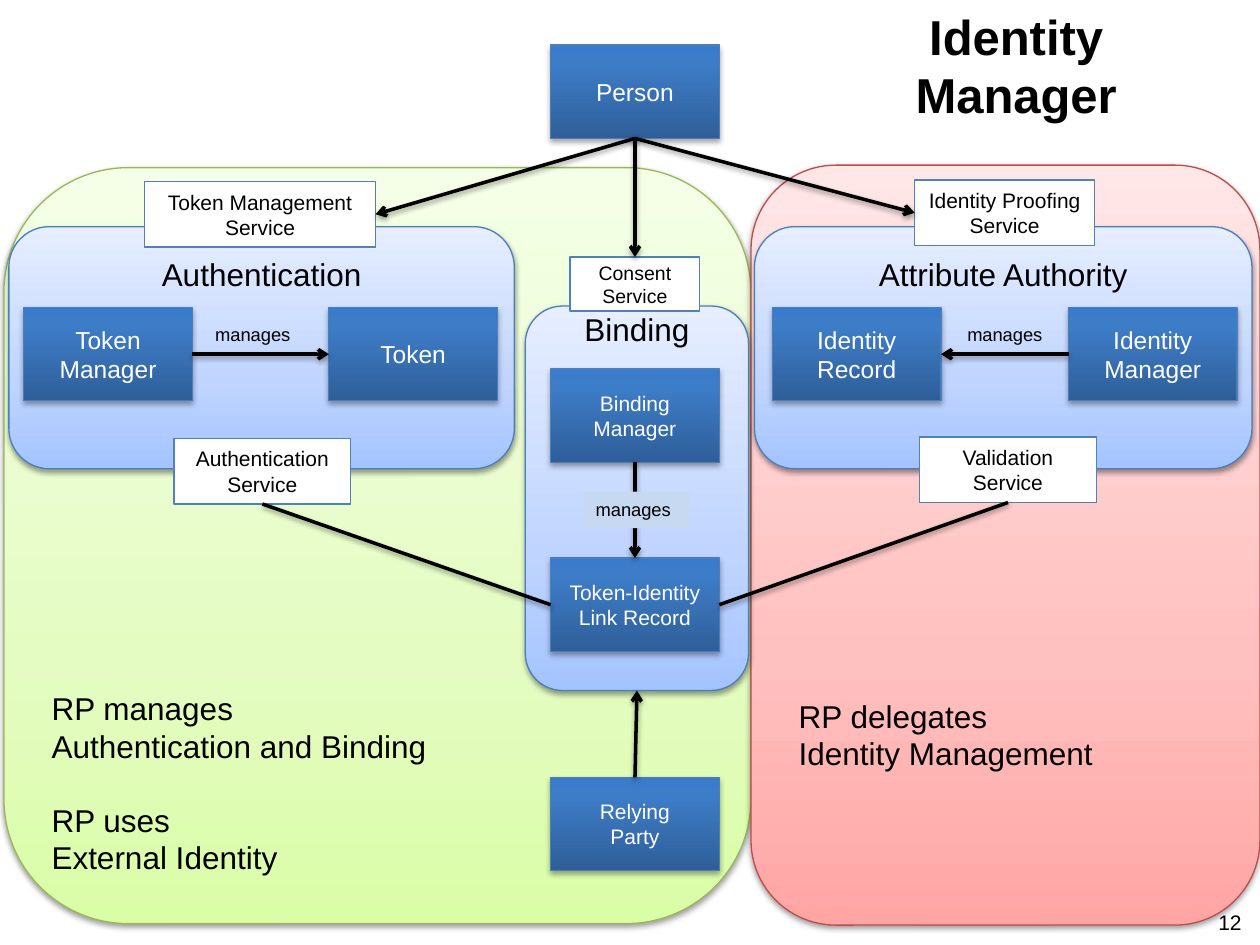
"""Build the identity manager diagram slide."""
from lxml.etree import SubElement
from pptx import Presentation
from pptx.dml.color import RGBColor
from pptx.enum.shapes import MSO_CONNECTOR as Connector, MSO_SHAPE as Shape
from pptx.enum.text import MSO_ANCHOR as Anchor, PP_ALIGN as Align
from pptx.oxml.ns import qn
from pptx.util import Cm, Pt

COLORS = {"black": "000000", "white": "FFFFFF", "label": "C6D9F1",
          "green_line": "98B955", "red_line": "BF4C48",
          "blue_line": "4B7EBC", "service_line": "4F81BD"}
GRADIENTS = {"green": [(0, "DAFDA7"), (35, "E4FCC2"), (100, "F5FFE7")],
             "red": [(0, "FFA6A5"), (35, "FFC0BF"), (100, "FFE7E7")],
             "pale_blue": [(0, "A4C4FF"), (35, "BFD4FF"), (100, "E6EEFF")],
             "deep_blue": [(0, "2F5F99"), (80, "3D7CC7"), (100, "3A7CCB")]}
TOP, LEFT, BOTTOM, RIGHT = range(4)
COLUMN, ROW = 11.1, 6.2


def rgb(name):
    return RGBColor.from_string(COLORS[name])


def set_values(target, values):
    for name, value in values.items():
        setattr(target, name, value)


def add_shadow(properties, opacity=38, distance=20000):
    effects = properties.find(qn("a:effectLst"))
    if effects is None:
        effects = SubElement(properties, qn("a:effectLst"))
    shadow = SubElement(effects, qn("a:outerShdw"), blurRad="40000",
                        dist=str(distance), dir="5400000", rotWithShape="0")
    color = SubElement(shadow, qn("a:srgbClr"), val=COLORS["black"])
    SubElement(color, qn("a:alpha"), val=str(opacity * 1000))


def fill_gradient(shape, name):
    shape.fill.gradient()
    shape.fill.gradient_angle = 90
    stops = next(shape._element.spPr.iter(qn("a:gsLst")))
    for stop in list(stops):
        stops.remove(stop)
    for position, color in GRADIENTS[name]:
        stop = SubElement(stops, qn("a:gs"), pos=str(position * 1000))
        SubElement(stop, qn("a:srgbClr"), val=color)


def write(shape, text, size, color="black", align=Align.CENTER, bold=False, **frame):
    text_frame = shape.text_frame
    text_frame.text = text
    set_values(text_frame, {"word_wrap": True, **frame})
    for paragraph in text_frame.paragraphs:
        paragraph.alignment = align
        set_values(paragraph.font, {"name": "Arial", "size": Pt(size), "bold": bold})
        paragraph.font.color.rgb = rgb(color)


def add_box(slide, kind, bounds, line):
    shape = slide.shapes.add_shape(kind, *map(Cm, bounds))
    shape.shadow.inherit = False
    shape.line.color.rgb = rgb(line)
    shape.line.width = Pt(0.75)
    return shape


def add_panel(slide, bounds, gradient, line, heading="", margin_top=0):
    panel = add_box(slide, Shape.ROUNDED_RECTANGLE, bounds, line)
    fill_gradient(panel, gradient)
    add_shadow(panel._element.spPr)
    if heading:
        write(panel, heading, 18, vertical_anchor=Anchor.TOP, margin_top=Cm(margin_top))
    return panel


def add_entity(slide, left, top, text, size=14):
    entity = add_box(slide, Shape.RECTANGLE, (left, top, 3.4, 1.88), "blue_line")
    fill_gradient(entity, "deep_blue")
    add_shadow(entity._element.spPr, 35, 23000)
    write(entity, text, size, "white", vertical_anchor=Anchor.MIDDLE,
          margin_left=0, margin_right=0)
    return entity


def add_service(slide, left, top, width, text, height=1.32, size=12):
    service = add_box(slide, Shape.RECTANGLE, (left, top, width, height), "service_line")
    service.fill.solid()
    service.fill.fore_color.rgb = rgb("white")
    write(service, text, size, vertical_anchor=Anchor.MIDDLE, margin_left=0, margin_right=0)
    return service


def add_text(slide, bounds, text, size, **style):
    box = slide.shapes.add_textbox(*map(Cm, bounds))
    write(box, text, size, **{"align": Align.LEFT, **style})
    return box


def add_manages(slide, left, top):
    return add_text(slide, (left, top, 2.13, 0.74), "manages", 10.5)


def connect(slide, start, start_side, end, end_side, arrow=True):
    connector = slide.shapes.add_connector(Connector.STRAIGHT, 0, 0, 0, 0)
    connector.begin_connect(start, start_side)
    connector.end_connect(end, end_side)
    connector.line.color.rgb = rgb("black")
    connector.line.width = Pt(2)
    if arrow:
        SubElement(connector.line._get_or_add_ln(), qn("a:tailEnd"), type="arrow")
    add_shadow(connector._element.spPr)


def main():
    presentation = Presentation()
    presentation.slide_width, presentation.slide_height = Cm(25.4), Cm(19.05)
    slide = presentation.slides.add_slide(presentation.slide_layouts[6])

    add_text(slide, (24.31, 18.21, 1.04, 0.76), "12", 12)
    add_panel(slide, (0.08, 3.38, 15.06, 15.24), "green", "green_line")
    add_panel(slide, (15.14, 3.33, 10.26, 15.32), "red", "red_line")
    managed = add_text(slide, (0.79, 13.77, 8.43, 4.11),
                       "RP manages\nAuthentication and Binding\nRP uses\nExternal Identity", 18)
    managed.text_frame.paragraphs[2].space_before = Pt(20.5)
    add_text(slide, (15.85, 13.92, 8.43, 1.8), "RP delegates\nIdentity Management", 18)
    add_text(slide, (15.57, 0, 9.83, 2.64), "Identity\nManager", 28,
             align=Align.CENTER, bold=True)

    blue = ("pale_blue", "blue_line")
    binding = add_panel(slide, (10.59, 6.17, 4.5, 7.75), *blue, "Binding", -0.13)
    add_panel(slide, (15.21, 4.57, 10.03, 4.88), *blue, "Attribute Authority", 0.33)
    add_panel(slide, (0.18, 4.57, 10.19, 4.88), *blue, "Authentication", 0.33)

    person = add_entity(slide, COLUMN, 0.91, "Person")
    binding_manager = add_entity(slide, COLUMN, 7.44, "Binding\nManager", 12)
    link_record = add_entity(slide, COLUMN, 11.25, "Token-Identity\nLink Record", 12)
    relying_party = add_entity(slide, COLUMN, 15.67, "Relying\nParty", 12)
    token_manager = add_entity(slide, 0.48, ROW, "Token\nManager")
    token = add_entity(slide, 6.63, ROW, "Token")
    identity_record = add_entity(slide, 15.57, ROW, "Identity\nRecord")
    identity_manager = add_entity(slide, 21.54, ROW, "Identity\nManager")

    validation = add_service(slide, 18.54, 8.81, 3.56, "Validation\nService")
    authentication = add_service(slide, 3.51, 8.84, 3.56, "Authentication\nService")
    consent = add_service(slide, 11.49, 5.18, 2.62, "Consent\nService", 1.09, 11.1)
    token_management = add_service(slide, 2.92, 3.66, 4.65, "Token Management\nService")
    proofing = add_service(slide, 18.44, 3.63, 3.63, "Identity Proofing\nService")

    connect(slide, person, BOTTOM, token_management, RIGHT)
    connect(slide, person, BOTTOM, consent, TOP)
    connect(slide, person, BOTTOM, proofing, LEFT)
    connect(slide, token_manager, RIGHT, token, LEFT)
    connect(slide, identity_manager, LEFT, identity_record, RIGHT)
    connect(slide, binding_manager, BOTTOM, link_record, TOP)
    connect(slide, relying_party, TOP, binding, BOTTOM)
    connect(slide, authentication, BOTTOM, link_record, LEFT, arrow=False)
    connect(slide, validation, BOTTOM, link_record, RIGHT, arrow=False)

    add_manages(slide, 4.09, 6.4)
    add_manages(slide, 19.25, 6.4)
    binding_label = add_manages(slide, 11.76, 9.91)
    binding_label.fill.solid()
    binding_label.fill.fore_color.rgb = rgb("label")

    presentation.save("out.pptx")


if __name__ == "__main__":
    main()
